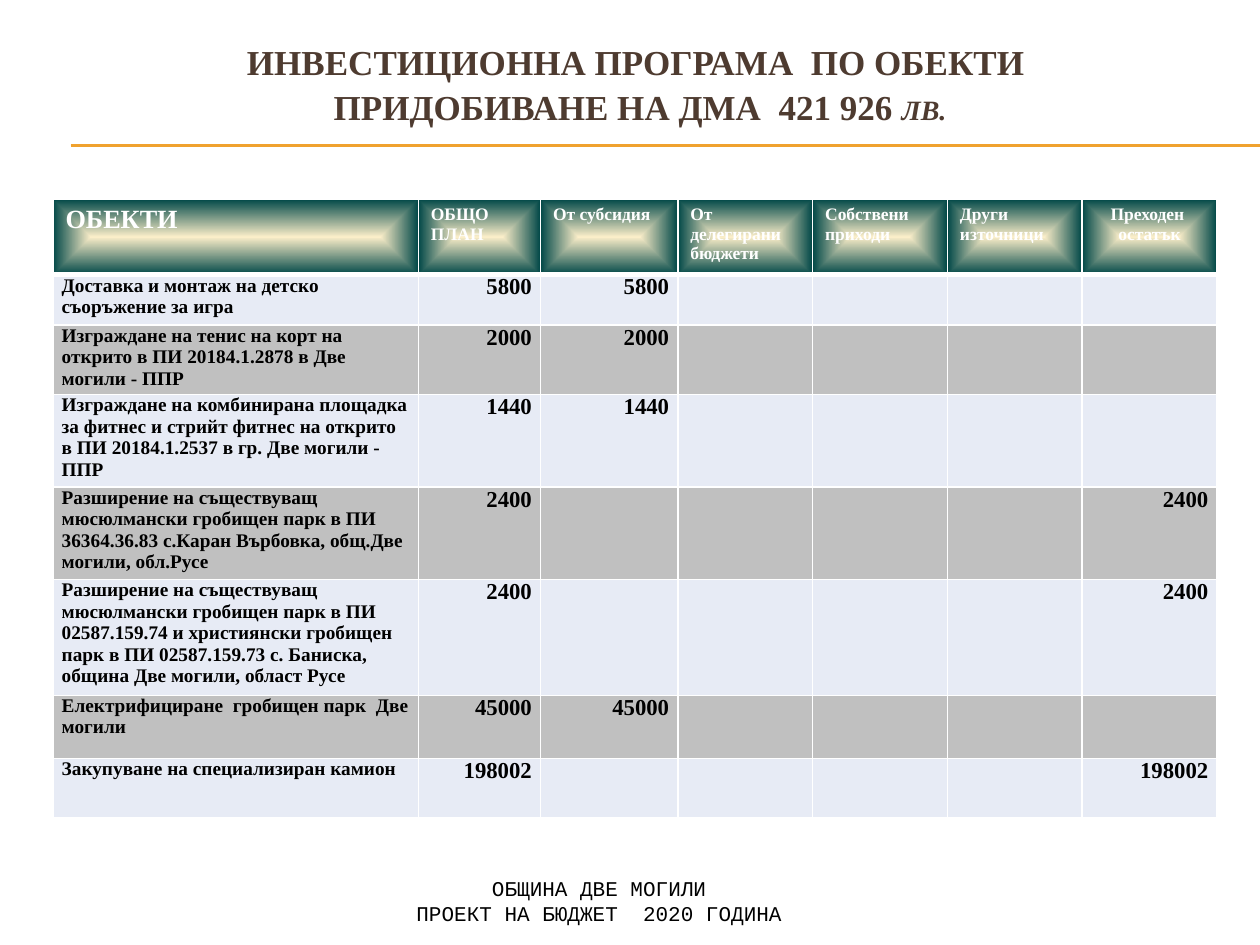
from lxml import etree
from pptx import Presentation
from pptx.dml.color import RGBColor
from pptx.enum.shapes import MSO_CONNECTOR
from pptx.enum.text import MSO_ANCHOR, PP_ALIGN
from pptx.oxml import parse_xml
from pptx.oxml.ns import nsdecls, qn
from pptx.util import Inches, Pt

BROWN = RGBColor(0x4E, 0x3B, 0x30)
ORANGE = RGBColor(0xF0, 0xA2, 0x2E)
BLACK = RGBColor(0, 0, 0)
WHITE = RGBColor(0xFF, 0xFF, 0xFF)
PALE = RGBColor(0xE7, 0xEB, 0xF5)
GREY = RGBColor(0xC0, 0xC0, 0xC0)
CREAM = RGBColor(0xFB, 0xEE, 0xC9)
TEAL = RGBColor(0x00, 0x47, 0x47)
SERIF = "Times New Roman"
MONO = "Courier New"

COL_WIDTHS = [2.9, 0.97, 1.09, 1.07, 1.07, 1.07, 1.07]
ROW_HEIGHTS = [0.57, 0.4, 0.47, 0.37, 0.33, 0.33, 0.5, 0.47]
HEADERS = ["ОБЕКТИ", "ОБЩО ПЛАН", "От субсидия", "От делегирани бюджети",
           "Собствени приходи", "Други източници", "Преходен  остатък"]
SUBSIDY, CARRIED = 2, 6
# Each project: name, planned total, column of the funding source
PROJECTS = [
    ("Доставка и монтаж на детско съоръжение за игра", 5800, SUBSIDY),
    ("Изграждане на тенис на корт на открито в ПИ 20184.1.2878 в Две могили - ППР",
     2000, SUBSIDY),
    ("Изграждане на комбинирана площадка за фитнес и стрийт фитнес на открито "
     "в ПИ 20184.1.2537 в гр. Две могили - ППР", 1440, SUBSIDY),
    ("Разширение на съществуващ мюсюлмански гробищен парк в ПИ 36364.36.83 "
     "с.Каран Върбовка, общ.Две могили, обл.Русе", 2400, CARRIED),
    ("Разширение на съществуващ мюсюлмански гробищен парк в ПИ 02587.159.74 "
     "и християнски гробищен парк в ПИ 02587.159.73 с. Баниска, "
     "община Две могили, област Русе", 2400, CARRIED),
    ("Електрифициране  гробищен парк  Две могили", 45000, SUBSIDY),
    ("Закупуване на специализиран камион", 198002, CARRIED),
]


def style(font, name, size, color, bold=False):
    font.name, font.size, font.bold = name, Pt(size), bold
    font.color.rgb = color


def add_box(slide, box, anchor, top_inset=0):
    tf = slide.shapes.add_textbox(*map(Inches, box)).text_frame
    tf.word_wrap = True
    tf.vertical_anchor = anchor
    tf.margin_left = tf.margin_right = tf.margin_bottom = 0
    tf.margin_top = Inches(top_inset)
    return tf


def add_title(slide, box):
    p = add_box(slide, box, MSO_ANCHOR.MIDDLE, 0.05).paragraphs[0]
    p.text = "ИНВЕСТИЦИОННА ПРОГРАМА  ПО ОБЕКТИ \vПРИДОБИВАНЕ НА ДМА  421 926 "
    p.alignment = PP_ALIGN.CENTER
    p.line_spacing = 1.08
    unit = p.add_run()
    unit.text = "ЛВ."
    for r in p.runs:
        style(r.font, SERIF, 20, BROWN, True)
    unit.font.size = Pt(16)
    unit.font.italic = True


def add_rule(slide, left, right, y):
    line = slide.shapes.add_connector(
        MSO_CONNECTOR.STRAIGHT, Inches(left), Inches(y), Inches(right), Inches(y))
    line.line.color.rgb = ORANGE
    line.line.width = Pt(0.75)
    etree.SubElement(line._element.spPr, qn("a:effectLst"))


def add_footer(slide, box):
    tf = add_box(slide, box, MSO_ANCHOR.BOTTOM)
    tf.text = "ОБЩИНА ДВЕ МОГИЛИ\nПРОЕКТ НА БЮДЖЕТ  2020 ГОДИНА"
    for p in tf.paragraphs:
        p.alignment = PP_ALIGN.CENTER
        style(p.runs[0].font, MONO, 12, BLACK)


def set_borders(cell, top=1, bottom=1):
    """Put white borders, in points, ahead of the cell's fill."""
    sides = (("lnL", 1), ("lnR", 1), ("lnT", top), ("lnB", bottom))
    for i, (tag, width) in enumerate(sides):
        cell._tc.get_or_add_tcPr().insert(i, parse_xml(
            f'<a:{tag} {nsdecls("a")} w="{Pt(width)}"><a:solidFill>'
            f'<a:srgbClr val="{WHITE}"/></a:solidFill></a:{tag}>'))


def fill_glow(cell):
    """Fill from cream in the middle to teal at the edges."""
    cell._tc.get_or_add_tcPr().append(parse_xml(
        f'<a:gradFill {nsdecls("a")} rotWithShape="1"><a:gsLst>'
        f'<a:gs pos="0"><a:srgbClr val="{CREAM}"/></a:gs>'
        f'<a:gs pos="100000"><a:srgbClr val="{TEAL}"/></a:gs></a:gsLst>'
        '<a:path path="shape"><a:fillToRect l="50000" t="50000" r="50000" b="50000"/>'
        '</a:path></a:gradFill>'))


def write_cell(cell, text, size, color, align):
    p = cell.text_frame.paragraphs[0]
    p.text = text
    p.alignment = align
    for r in p.runs:
        style(r.font, SERIF, size, color, True)


def add_project_table(slide, left, top):
    table = slide.shapes.add_table(
        len(ROW_HEIGHTS), len(COL_WIDTHS), Inches(left), Inches(top),
        Inches(sum(COL_WIDTHS)), Inches(sum(ROW_HEIGHTS))).table
    for col, width in zip(table.columns, COL_WIDTHS):
        col.width = Inches(width)
    for row, height in zip(table.rows, ROW_HEIGHTS):
        row.height = Inches(height)

    for c, header in enumerate(HEADERS):
        cell = table.cell(0, c)
        align = PP_ALIGN.CENTER if c == CARRIED else PP_ALIGN.LEFT
        write_cell(cell, header, 10 if c else 15, WHITE, align)
        fill_glow(cell)
        set_borders(cell, bottom=3)

    for r, (name, amount, source) in enumerate(PROJECTS, 1):
        texts = {0: name, 1: str(amount), source: str(amount)}
        for c in range(len(COL_WIDTHS)):
            cell = table.cell(r, c)
            if c in texts:
                cell.margin_left = cell.margin_right = Inches(0.07)
                cell.margin_top = cell.margin_bottom = 0
                write_cell(cell, texts[c], 13 if c else 11, BLACK,
                           PP_ALIGN.RIGHT if c else PP_ALIGN.LEFT)
            else:
                cell.text_frame.paragraphs[0].font.size = Pt(11)
            cell.fill.solid()
            cell.fill.fore_color.rgb = PALE if r % 2 else GREY
            set_borders(cell, top=3 if r == 1 else 1)


def main():
    prs = Presentation()
    prs.slide_width, prs.slide_height = Inches(10), Inches(7.5)
    slide = prs.slides.add_slide(prs.slide_layouts[6])
    for y in (1.15, 1.16):
        add_rule(slide, 0.56, 10, y)
    add_title(slide, (1.08, 0.17, 8, 0.92))
    add_footer(slide, (2.92, 6.95, 3.67, 0.4))
    add_project_table(slide, 0.42, 1.58)
    prs.save("out.pptx")


if __name__ == "__main__":
    main()
